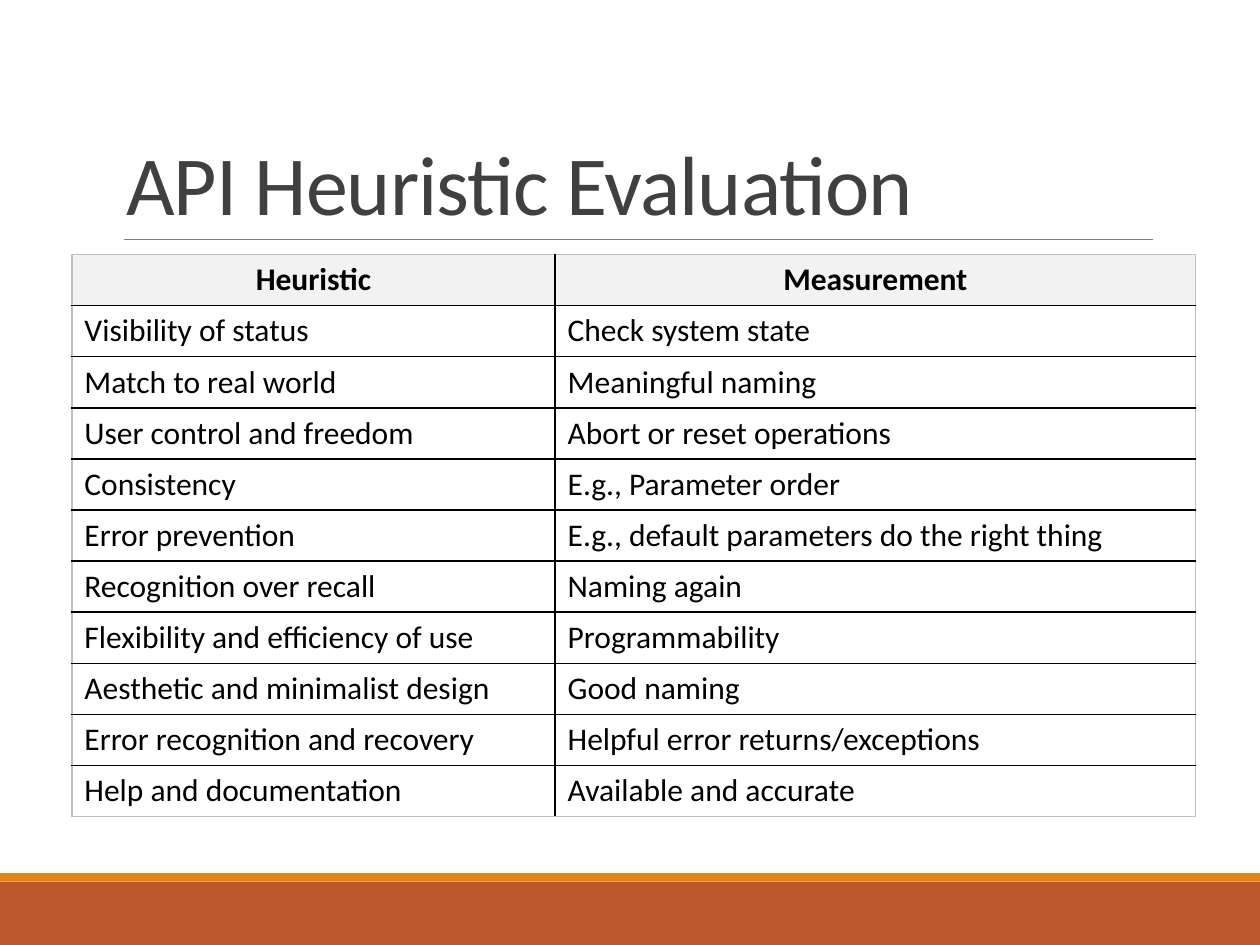
from lxml import etree
from pptx import Presentation
from pptx import util as u
from pptx.dml.color import RGBColor
from pptx.enum import shapes, text
from pptx.oxml.ns import qn

RUST = RGBColor(0xBD, 0x58, 0x2C)
ORANGE = RGBColor(0xE4, 0x83, 0x12)
RULE_GREY = RGBColor(0x80, 0x80, 0x80)
TITLE_GREY = RGBColor(0x40, 0x40, 0x40)
HEADER_GREY = RGBColor(0xF2, 0xF2, 0xF2)
EDGE_GREY = RGBColor(0xBF, 0xBF, 0xBF)
BLACK = RGBColor(0, 0, 0)
FONT = "Calibri"
W, H = u.Inches(10), u.Inches(7.5)

ROWS = [
    ("Heuristic", "Measurement"),
    ("Visibility of status", "Check system state"),
    ("Match to real world", "Meaningful naming"),
    ("User control and freedom", "Abort or reset operations"),
    ("Consistency", "E.g., Parameter order"),
    ("Error prevention", "E.g., default parameters do the right thing"),
    ("Recognition over recall", "Naming again"),
    ("Flexibility and efficiency of use", "Programmability"),
    ("Aesthetic and minimalist design", "Good naming"),
    ("Error recognition and recovery", "Helpful error returns/exceptions"),
    ("Help and documentation", "Available and accurate"),
]


def box(left, top, width, height):
    return tuple(u.Inches(v) for v in (left, top, width, height))


def set_font(p, size, color, bold=False):
    p.font.name, p.font.size, p.font.bold = FONT, u.Pt(size), bold
    p.font.color.rgb = color


def add_footer(slide, left, top, width, height):
    stripe = int(height * 0.12)
    for y, h, color in ((top + stripe, height - stripe, RUST), (top, stripe, ORANGE)):
        sp = slide.shapes.add_shape(shapes.MSO_SHAPE.RECTANGLE, left, y, width, h)
        sp.shadow.inherit = False
        sp.fill.solid()
        sp.fill.fore_color.rgb = color
        sp.line.fill.background()


def add_title(slide, title, left, top, width, height):
    bottom = top + height
    rule = slide.shapes.add_connector(
        shapes.MSO_CONNECTOR.STRAIGHT, left + int(width * 0.01), bottom, left + width, bottom)
    rule.line.color.rgb = RULE_GREY
    rule.line.width = u.Pt(0.5)
    etree.SubElement(rule._element.spPr, qn("a:effectLst"))

    sp = slide.shapes.title
    sp.left, sp.top, sp.width, sp.height = left, top, width, height
    tf = sp.text_frame
    tf.text = title
    tf.word_wrap = True
    tf.auto_size = text.MSO_AUTO_SIZE.NONE
    tf.vertical_anchor = text.MSO_ANCHOR.BOTTOM
    p = tf.paragraphs[0]
    p.alignment = text.PP_ALIGN.LEFT
    p.line_spacing = 0.85
    set_font(p, 48, TITLE_GREY)
    p.runs[0].font._element.set("spc", "-50")


def set_borders(cell, colors):
    tcPr = cell._tc.get_or_add_tcPr()
    for i, (side, color) in enumerate(colors.items()):
        ln = etree.Element(qn(f"a:ln{side}"), w=str(u.Pt(1)))
        fill = etree.SubElement(ln, qn("a:solidFill"))
        etree.SubElement(fill, qn("a:srgbClr"), val=str(color))
        tcPr.insert(i, ln)


def add_heuristics(slide, left, top, width, height):
    n, m = len(ROWS), len(ROWS[0])
    table = slide.shapes.add_table(n, m, left, top, width, height).table
    for col, share in zip(table.columns, (0.43, 0.57)):
        col.width = int(width * share)
    for i, row in enumerate(ROWS):
        table.rows[i].height = height // n
        for j, label in enumerate(row):
            cell = table.cell(i, j)
            cell.text = label
            p = cell.text_frame.paragraphs[0]
            set_font(p, 18, BLACK, bold=i == 0)
            if i == 0:
                p.alignment = text.PP_ALIGN.CENTER
                cell.fill.solid()
                cell.fill.fore_color.rgb = HEADER_GREY
            else:
                cell.fill.background()
            outer = {"L": j == 0, "R": j == m - 1, "T": i == 0, "B": i == n - 1}
            set_borders(cell, {k: EDGE_GREY if v else BLACK for k, v in outer.items()})


def main():
    prs = Presentation()
    prs.slide_width, prs.slide_height = W, H
    slide = prs.slides.add_slide(prs.slide_layouts[5])
    add_footer(slide, *box(0, 6.93, 10, 0.57))
    add_title(slide, "API Heuristic Evaluation", *box(0.9, 0.31, 8.25, 1.59))
    add_heuristics(slide, *box(0.57, 2.02, 8.92, 4.46))
    prs.save("out.pptx")


if __name__ == "__main__":
    main()
